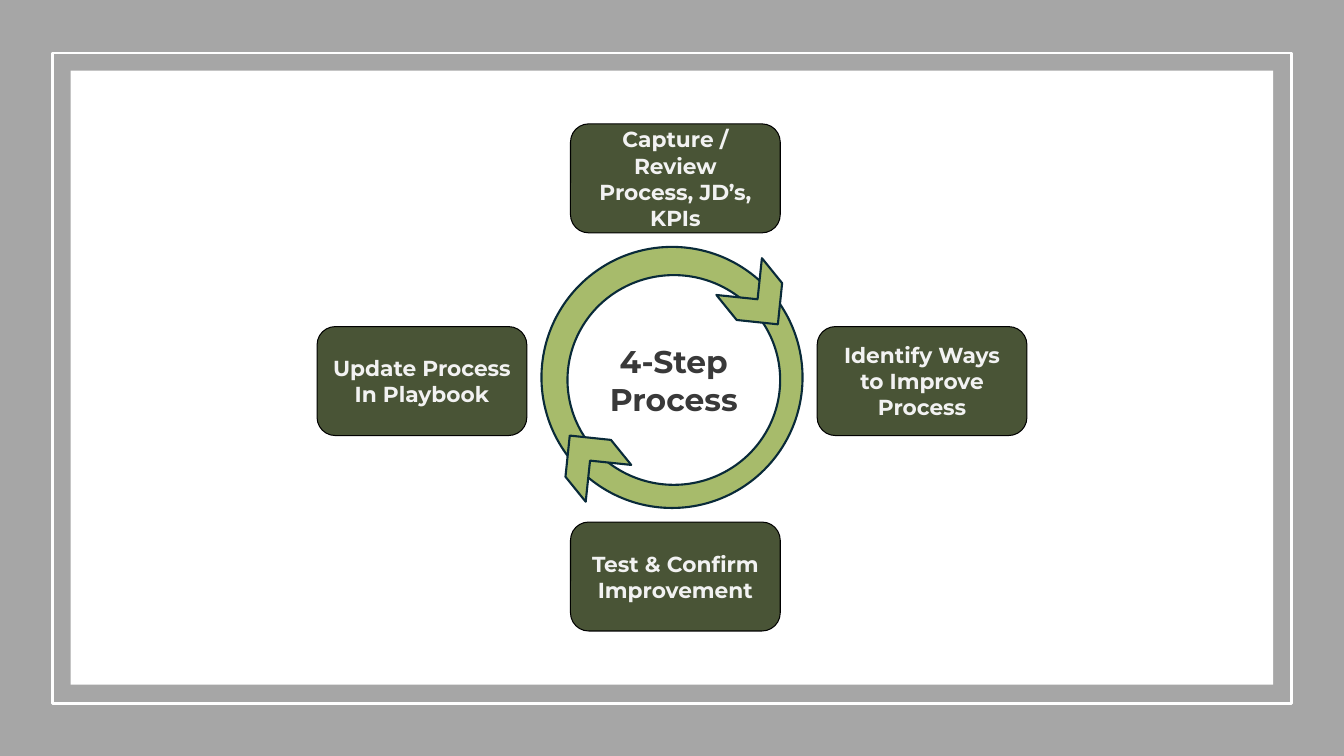
import pptx
import pptx.util
import pptx.dml.color
import pptx.enum.shapes
import pptx.enum.text

Pt = pptx.util.Pt
RGBColor = pptx.dml.color.RGBColor
SHAPE = pptx.enum.shapes.MSO_SHAPE

WHITE = RGBColor(0xFF, 0xFF, 0xFF)
BLACK = RGBColor(0x00, 0x00, 0x00)
GRAY = RGBColor(0xA6, 0xA6, 0xA6)
NAVY = RGBColor(0x09, 0x2A, 0x39)
LIME = RGBColor(0xA7, 0xBB, 0x6B)
OLIVE = RGBColor(0x49, 0x54, 0x36)
PALE = RGBColor(0xF2, 0xF2, 0xF2)
CHARCOAL = RGBColor(0x39, 0x39, 0x39)

FONT = "Montserrat"
SLIDE_W, SLIDE_H = 960, 540
CENTER = (480, 269.6)
HUB = (481.3, 271.4)
CARD_W, CARD_H = 149.8, 77.8
REACH_X, REACH_Y = 178.6, 142.2

TITLE = "4-Step Process"
STEPS = [
    ("Capture / Review Process, JD’s, KPIs", 482.4, CENTER[1] - REACH_Y),
    ("Test & Confirm Improvement", 482.4, CENTER[1] + REACH_Y),
    ("Identify Ways to Improve Process", CENTER[0] + REACH_X, 272.2),
    ("Update Process In Playbook", CENTER[0] - REACH_X, 272.2),
]
FRAMES = [
    (SLIDE_W, SLIDE_H, SLIDE_H / 2, GRAY, None),
    (885, 464.4, 270.3, None, WHITE),
    (859, 438.6, 269.8, WHITE, None),
]
ARROWS = [(1, 51), (-1, 231)]

prs = pptx.Presentation()
prs.slide_width, prs.slide_height = Pt(SLIDE_W), Pt(SLIDE_H)
slide = prs.slides.add_slide(prs.slide_layouts[6])


def add_centered(kind, cx, cy, w, h, fill, line, weight=1.5):
    sp = slide.shapes.add_shape(kind, Pt(cx - w / 2), Pt(cy - h / 2), Pt(w), Pt(h))
    sp.shadow.inherit = False
    if fill is None:
        sp.fill.background()
    else:
        sp.fill.solid()
        sp.fill.fore_color.rgb = fill
    if line is None:
        sp.line.fill.background()
    else:
        sp.line.color.rgb = line
        sp.line.width = Pt(weight)
    return sp


def write(sp, text, size, color):
    tf = sp.text_frame
    tf.word_wrap = True
    tf.vertical_anchor = pptx.enum.text.MSO_ANCHOR.MIDDLE
    p = tf.paragraphs[0]
    p.alignment = pptx.enum.text.PP_ALIGN.CENTER
    p.space_after = Pt(6)
    r = p.add_run()
    r.text = text
    r.font.name = FONT
    r.font.size = Pt(size)
    r.font.bold = True
    r.font.color.rgb = color


for w, h, cy, fill, line in FRAMES:
    add_centered(SHAPE.RECTANGLE, SLIDE_W / 2, cy, w, h, fill, line)

add_centered(SHAPE.OVAL, *CENTER, 186.5, 186.5, LIME, NAVY)

for text, cx, cy in STEPS:
    card = add_centered(SHAPE.ROUNDED_RECTANGLE, cx, cy, CARD_W, CARD_H, OLIVE, BLACK, 0.75)
    write(card, text, 15.5, PALE)

hub = add_centered(SHAPE.OVAL, *HUB, 151.9, 149.8, WHITE, NAVY)
write(hub, TITLE, 22.4, CHARCOAL)

for side, angle in ARROWS:
    arrow = add_centered(SHAPE.CHEVRON, HUB[0] + side * 60.5, HUB[1] - side * 56.8,
                         43.9, 41.8, LIME, NAVY)
    arrow.rotation = angle

prs.save("out.pptx")
